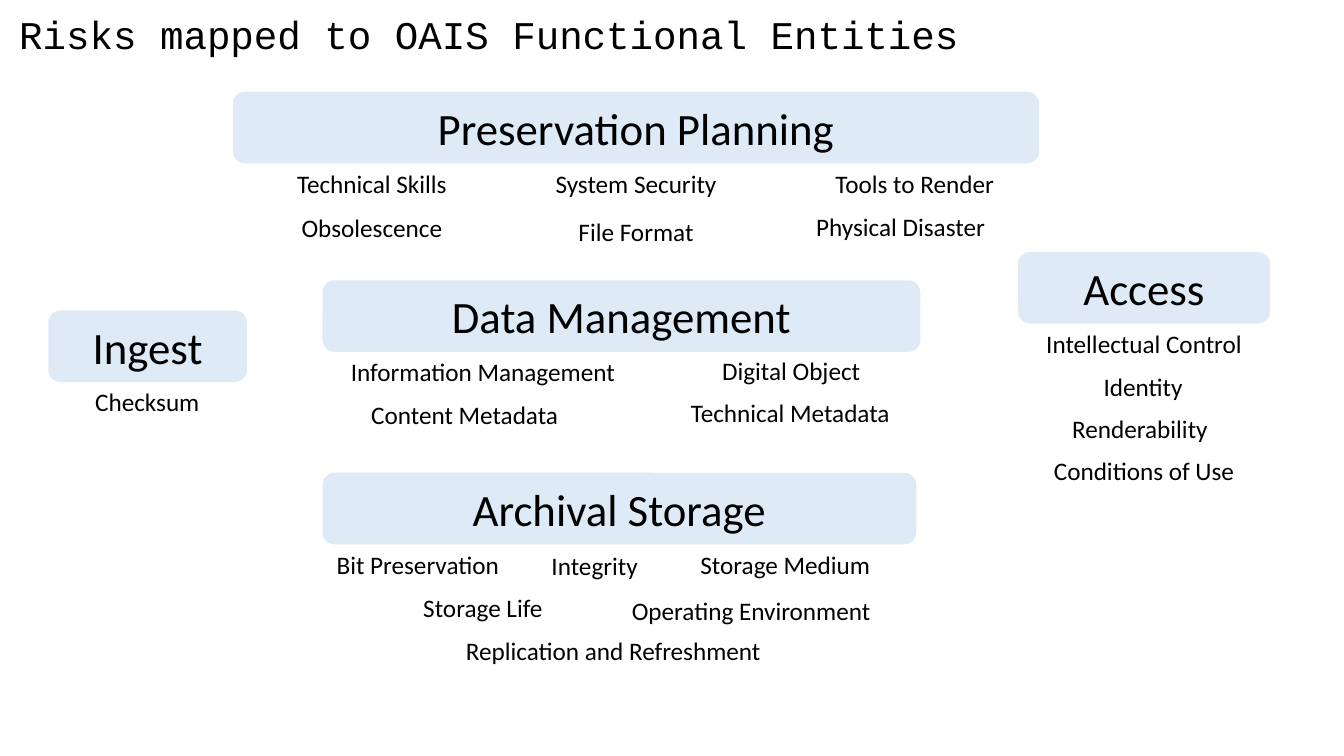
from pptx import Presentation
from pptx.dml.color import RGBColor
from pptx.enum.shapes import MSO_SHAPE as Shape
from pptx.enum.text import MSO_ANCHOR as Anchor, MSO_AUTO_SIZE as AutoSize, PP_ALIGN as Align
from pptx.util import Pt

COLORS = {"text": "000000", "entity": "DEEBF7"}
HEADING = "Risks mapped to OAIS Functional Entities"
ENTITY_HEIGHT = 51.1
RISK_HEIGHT = 29.1
ROW = 30.24
LEFT_ALIGNED = {"Operating Environment"}

# Each entity: name, left, top, width, risks as (text, x from entity, y below entity, width)
ENTITIES = [
    ("Preservation Planning", 166.3, 65.5, 576, [
        ("Technical Skills", 0, 0, 198.7),
        ("System Security", 198.7, 0, 178.6),
        ("Tools to Render", 397.4, 0, 179.3),
        ("Obsolescence", 0, 31.7, 198.7),
        ("File Format", 198.7, 34.6, 178.6),
        ("Physical Disaster", 377.3, 31, 199.4),
    ]),
    ("Data Management", 230.4, 200.2, 427, [
        ("Information Management", 9.4, 0, 210.2),
        ("Digital Object", 244.8, -1.4, 180),
        ("Content Metadata", 11.5, ROW, 180),
        ("Technical Metadata", 244.1, ROW - 1.4, 180),
    ]),
    ("Access", 727.2, 180, 180, [
        ("Intellectual Control", 0, 0, 180),
        ("Identity", -0.7, ROW, 180),
        ("Renderability", -2.9, 2 * ROW, 180),
        ("Conditions of Use", 0, 3 * ROW, 180),
    ]),
    ("Ingest", 34.6, 221.8, 141.8, [
        ("Checksum", -0.7, -0.7, 142.6),
    ]),
    ("Archival Storage", 230.4, 337.7, 424.1, [
        ("Bit Preservation", -3.6, 0, 143.3),
        ("Integrity", 129.6, 0.7, 129.6),
        ("Storage Medium", 259.2, 0, 142.6),
        ("Storage Life", 43.2, 31, 142.6),
        ("Operating Environment", 213.8, 33.1, 186.5),
        ("Replication and Refreshment", 84.2, 2 * ROW + 0.7, 247),
    ]),
]


def write(holder, text, size, font="Calibri", align=Align.CENTER,
          anchor=Anchor.TOP, auto_size=AutoSize.SHAPE_TO_FIT_TEXT):
    frame = holder.text_frame
    frame.text = text
    frame.word_wrap = True
    frame.auto_size = auto_size
    frame.vertical_anchor = anchor
    paragraph = frame.paragraphs[0]
    paragraph.alignment = align
    run_font = paragraph.runs[0].font
    run_font.name = font
    run_font.size = Pt(size)
    run_font.color.rgb = RGBColor.from_string(COLORS["text"])


def add_entity(slide, name, left, top, width):
    entity = slide.shapes.add_shape(
        Shape.ROUNDED_RECTANGLE, Pt(left), Pt(top), Pt(width), Pt(ENTITY_HEIGHT))
    entity.shadow.inherit = False
    entity.fill.solid()
    entity.fill.fore_color.rgb = RGBColor.from_string(COLORS["entity"])
    entity.line.fill.background()
    write(entity, name, 32, anchor=Anchor.MIDDLE)


def add_risk(slide, text, left, top, width):
    risk = slide.shapes.add_textbox(Pt(left), Pt(top), Pt(width), Pt(RISK_HEIGHT))
    write(risk, text, 18, align=Align.LEFT if text in LEFT_ALIGNED else Align.CENTER)


def main():
    deck = Presentation()
    deck.slide_width, deck.slide_height = Pt(960), Pt(540)
    slide = deck.slides.add_slide(deck.slide_layouts[5])

    title = slide.shapes.title
    title.left, title.top, title.width, title.height = Pt(6.5), Pt(7.2), Pt(890), Pt(56.9)
    write(title, HEADING, 28, "Courier New", Align.LEFT, auto_size=AutoSize.NONE)
    title.text_frame.paragraphs[0].line_spacing = 0.9

    for name, left, top, width, risks in ENTITIES:
        add_entity(slide, name, left, top, width)
        for text, dx, dy, risk_width in risks:
            add_risk(slide, text, left + dx, top + ENTITY_HEIGHT + dy, risk_width)

    deck.save("out.pptx")


if __name__ == "__main__":
    main()
